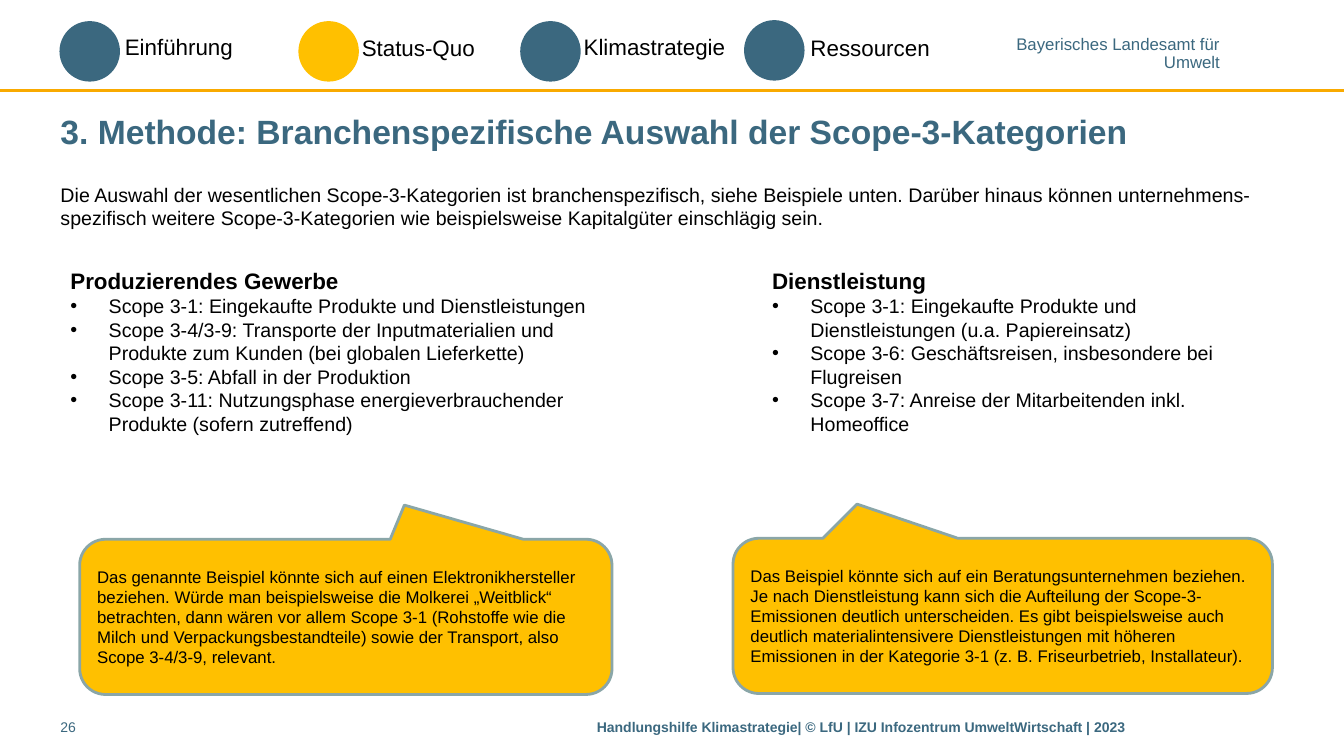
from dataclasses import dataclass
from typing import Any

from lxml.etree import SubElement
from pptx import Presentation
from pptx.dml.color import RGBColor
from pptx.enum.shapes import MSO_CONNECTOR as Connector, MSO_SHAPE as ShapeKind
from pptx.enum.text import MSO_ANCHOR as Anchor, PP_ALIGN as Align
from pptx.oxml.ns import qn
from pptx.util import Inches, Pt


@dataclass(frozen=True)
class Theme:
    font: str = "Arial"
    black: RGBColor = RGBColor(0x00, 0x00, 0x00)
    blue: RGBColor = RGBColor(0x3B, 0x68, 0x7F)
    yellow: RGBColor = RGBColor(0xFF, 0xC0, 0x00)
    rule: RGBColor = RGBColor(0xF9, 0xAA, 0x00)
    outline: RGBColor = RGBColor(0x8A, 0xA6, 0xA8)
    title: int = 24
    heading: int = 16
    body: int = 14
    note: int = 12
    footer: int = 10


THEME = Theme()
Box = tuple[float, float, float, float]


@dataclass(frozen=True)
class Chapter:
    name: str
    circle: tuple[float, float]
    label: tuple[float, float]
    label_width: float
    active: bool = False


@dataclass(frozen=True)
class Sector:
    heading: str
    items: tuple[str, ...]
    box: Box
    note: str
    note_box: Box
    tip: tuple[float, float]


CHAPTERS = (
    Chapter("Einführung", (0.59, 0.21), (1.14, 0.28), 1.36),
    Chapter("Status-Quo", (2.96, 0.21), (3.49, 0.29), 1.36, active=True),
    Chapter("Klimastrategie", (5.16, 0.21), (5.69, 0.28), 2.95),
    Chapter("Ressourcen", (7.38, 0.2), (7.94, 0.29), 2.95),
)

SECTORS = (
    Sector(
        "Produzierendes Gewerbe",
        (
            "Scope 3-1: Eingekaufte Produkte und Dienstleistungen",
            "Scope 3-4/3-9: Transporte der Inputmaterialien und Produkte zum Kunden "
            "(bei globalen Lieferkette)",
            "Scope 3-5: Abfall in der Produktion",
            "Scope 3-11: Nutzungsphase energieverbrauchender Produkte (sofern zutreffend)",
        ),
        (0.6, 2.6, 5.32, 1.78),
        "Das genannte Beispiel könnte sich auf einen Elektronikhersteller beziehen. "
        "Würde man beispielsweise die Molkerei „Weitblick“ betrachten, dann wären vor "
        "allem Scope 3-1 (Rohstoffe wie die Milch und Verpackungsbestandteile) sowie "
        "der Transport, also Scope 3-4/3-9, relevant.",
        (0.79, 5.35, 5.28, 1.54),
        (0.11, -0.72),
    ),
    Sector(
        "Dienstleistung",
        (
            "Scope 3-1: Eingekaufte Produkte und Dienstleistungen (u.a. Papiereinsatz)",
            "Scope 3-6: Geschäftsreisen, insbesondere bei Flugreisen",
            "Scope 3-7: Anreise der Mitarbeitenden inkl. Homeoffice",
        ),
        (7.56, 2.6, 5.06, 2.39),
        "Das Beispiel könnte sich auf ein Beratungsunternehmen beziehen. Je nach "
        "Dienstleistung kann sich die Aufteilung der Scope-3-Emissionen deutlich "
        "unterscheiden. Es gibt beispielsweise auch deutlich materialintensivere "
        "Dienstleistungen mit höheren Emissionen in der Kategorie 3-1 "
        "(z. B. Friseurbetrieb, Installateur).",
        (7.27, 5.34, 5.35, 1.54),
        (-0.27, -0.72),
    ),
)

FLUSH = {"margin_left": 0, "margin_right": 0}
TIGHT = FLUSH | {"margin_top": 0, "margin_bottom": 0}


def apply(target: Any, values: dict[str, Any]) -> None:
    for name, value in values.items():
        setattr(target, name, value)


def write(paragraph: Any, text: str, size: int, color: RGBColor = THEME.black,
          bold: bool = False, **layout: Any) -> None:
    apply(paragraph, {"alignment": Align.LEFT} | layout)
    run = paragraph.add_run()
    run.text = text
    apply(run.font, {"name": THEME.font, "size": Pt(size), "bold": bold})
    run.font.color.rgb = color


def add_bullet(paragraph: Any) -> None:
    properties = paragraph._p.get_or_add_pPr()
    properties.set("marL", str(Inches(0.38)))
    properties.set("indent", str(-Inches(0.38)))
    SubElement(properties, qn("a:buFont")).set("typeface", THEME.font)
    SubElement(properties, qn("a:buChar")).set("char", "•")


def add_text_frame(slide: Any, box: Box, **frame_format: Any) -> Any:
    frame = slide.shapes.add_textbox(*map(Inches, box)).text_frame
    apply(frame, {"word_wrap": True} | frame_format)
    return frame


def add_filled_shape(slide: Any, kind: ShapeKind, box: Box, fill: RGBColor) -> Any:
    shape = slide.shapes.add_shape(kind, *map(Inches, box))
    shape.shadow.inherit = False
    shape.fill.solid()
    shape.fill.fore_color.rgb = fill
    shape.line.fill.background()
    return shape


def add_rule(slide: Any) -> None:
    rule = slide.shapes.add_connector(
        Connector.STRAIGHT, 0, Inches(0.9), Inches(13.33), Inches(0.9))
    rule.line.color.rgb = THEME.rule
    rule.line.width = Pt(2)
    SubElement(rule._element.spPr, qn("a:effectLst"))


def add_chapter(slide: Any, chapter: Chapter) -> None:
    fill = THEME.yellow if chapter.active else THEME.blue
    add_filled_shape(slide, ShapeKind.OVAL, (*chapter.circle, 0.6, 0.6), fill)
    frame = add_text_frame(slide, (*chapter.label, chapter.label_width, 0.37))
    write(frame.paragraphs[0], chapter.name, THEME.heading)


def add_sector(slide: Any, sector: Sector) -> None:
    frame = add_text_frame(slide, sector.box)
    write(frame.paragraphs[0], sector.heading, THEME.heading, bold=True)
    for item in sector.items:
        paragraph = frame.add_paragraph()
        add_bullet(paragraph)
        write(paragraph, item, THEME.body)

    callout = add_filled_shape(
        slide, ShapeKind.ROUNDED_RECTANGULAR_CALLOUT, sector.note_box, THEME.yellow)
    callout.adjustments[0], callout.adjustments[1] = sector.tip
    callout.line.color.rgb = THEME.outline
    callout.line.width = Pt(2)
    apply(callout.text_frame, {"word_wrap": True, "vertical_anchor": Anchor.MIDDLE})
    write(callout.text_frame.paragraphs[0], sector.note, THEME.note)


def main() -> None:
    presentation = Presentation()
    apply(presentation, {"slide_width": Inches(13.33), "slide_height": Inches(7.5)})
    slide = presentation.slides.add_slide(presentation.slide_layouts[6])

    # Header with chapter navigation
    add_rule(slide)
    agency = add_text_frame(slide, (10.07, 0.37, 2.03, 0.34), **TIGHT | {"word_wrap": False})
    for paragraph, text in ((agency.paragraphs[0], "Bayerisches Landesamt für"),
                            (agency.add_paragraph(), "Umwelt")):
        write(paragraph, text, THEME.note, THEME.blue,
              alignment=Align.RIGHT, line_spacing=0.85)
    for chapter in CHAPTERS:
        add_chapter(slide, chapter)

    # Title and introduction
    title = add_text_frame(slide, (0.6, 1.02, 12.31, 0.55), **FLUSH, vertical_anchor=Anchor.MIDDLE)
    write(title.paragraphs[0], "3. Methode: Branchenspezifische Auswahl der Scope-3-Kategorien",
          THEME.title, THEME.blue, bold=True)
    introduction = add_text_frame(slide, (0.6, 1.78, 12.31, 0.87), **FLUSH)
    write(introduction.paragraphs[0],
          "Die Auswahl der wesentlichen Scope-3-Kategorien ist branchenspezifisch, siehe "
          "Beispiele unten. Darüber hinaus können unternehmens-spezifisch weitere "
          "Scope-3-Kategorien wie beispielsweise Kapitalgüter einschlägig sein.",
          THEME.body, line_spacing=Pt(16))

    # Sector columns with their callouts
    for sector in SECTORS:
        add_sector(slide, sector)

    # Footer
    number = add_text_frame(slide, (0.6, 7.08, 0.7, 0.31), **FLUSH)
    write(number.paragraphs[0], "26", THEME.footer, THEME.blue)
    credit = add_text_frame(slide, (5.92, 7.08, 6.99, 0.31), **FLUSH)
    write(credit.paragraphs[0],
          "Handlungshilfe Klimastrategie| © LfU | IZU Infozentrum UmweltWirtschaft | 2023",
          THEME.footer, THEME.blue, bold=True)

    presentation.save("out.pptx")


if __name__ == "__main__":
    main()
